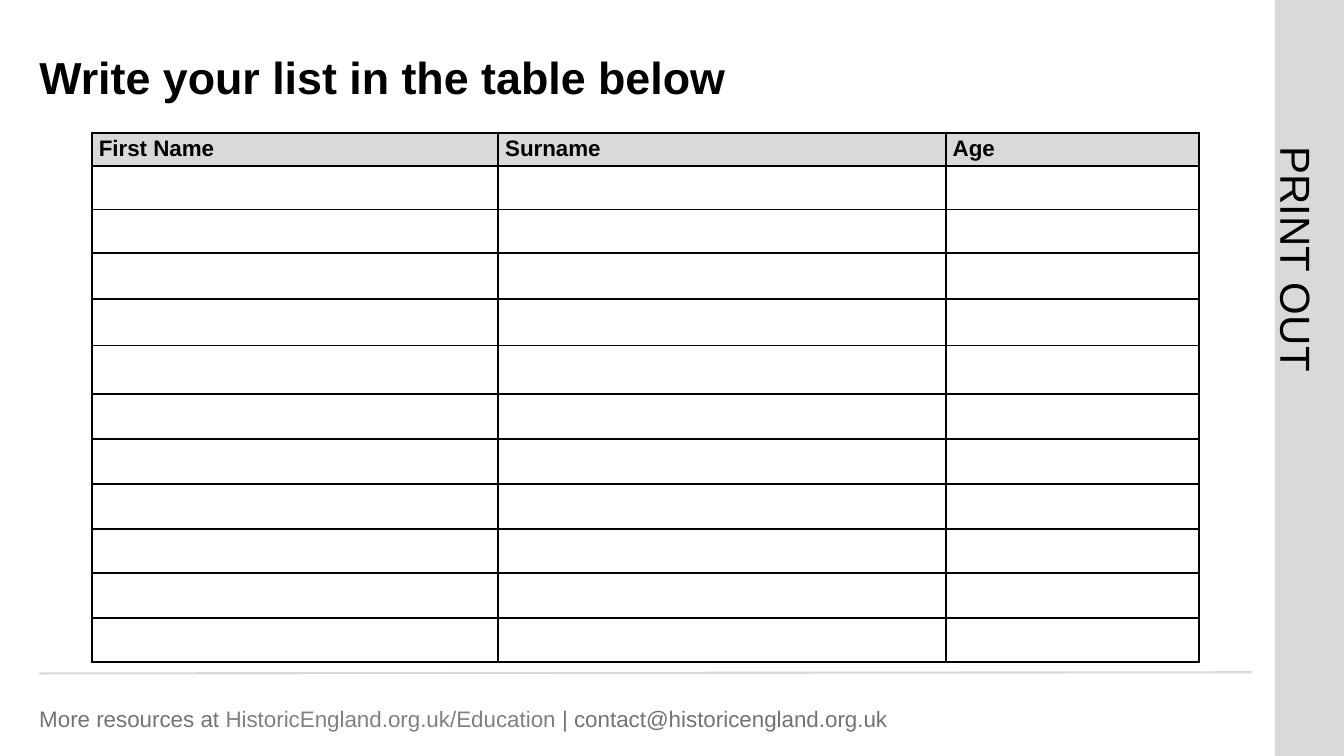
from dataclasses import dataclass
from lxml.etree import SubElement as Sub
from pptx import Presentation
from pptx.dml.color import RGBColor
from pptx.enum.shapes import MSO_CONNECTOR as Link, MSO_SHAPE as Form
from pptx.enum.text import MSO_ANCHOR as Anchor, PP_ALIGN as Align
from pptx.oxml.ns import qn
from pptx.util import Cm, Pt

INK, GREY, WHITE = "000000", "D9D9D9", "FFFFFF"


@dataclass
class Box:
    left: float
    top: float
    width: float
    height: float

    def cm(self) -> tuple:
        return Cm(self.left), Cm(self.top), Cm(self.width), Cm(self.height)


@dataclass
class Span:
    text: str
    color: str


@dataclass
class Label:
    box: Box
    spans: list[Span]
    size: int
    lead: float
    align: Align = Align.LEFT
    turn: int = 0


@dataclass
class Column:
    head: str
    width: float


LABELS = [
    Label(Box(0.99, 17.27, 24.46, 1.04),
          [Span("More resources at ", "737373"),
           Span("HistoricEngland.org.uk/Education ", "808080"),
           Span("| contact@historicengland.org.uk", "737373")], 16, 33.6),
    Label(Box(28.12, 5.61, 10.19, 1.83), [Span("PRINT OUT", INK)],
          30, 58.8, Align.CENTER, 90),
]
COLUMNS = [Column("First Name", 10.24), Column("Surname", 11.28), Column("Age", 6.38)]
ROWS = [0.79] + [1.09] * 2 + [1.17] * 2 + [1.22] + [1.14] * 2 + [1.12] * 4


def paint(target, color: str) -> None:
    target.solid()
    target.fore_color.rgb = RGBColor.from_string(color)


def style(para, size: int, bold: bool = False) -> None:
    para.font.name = "Arial"
    para.font.size = Pt(size)
    para.font.bold = bold


def inset(area, left: float, top: float, right: float) -> None:
    area.margin_left, area.margin_right = Cm(left), Cm(right)
    area.margin_top = area.margin_bottom = Cm(top)


def add_bar(slide) -> None:
    bar = slide.shapes.add_shape(Form.RECTANGLE, *Box(32.13, 0, 1.74, 19.05).cm())
    bar.shadow.inherit = False
    paint(bar.fill, GREY)
    bar.line.fill.background()


def add_rule(slide) -> None:
    rule = slide.shapes.add_connector(Link.STRAIGHT, Cm(0.99), Cm(16.97), Cm(31.55), Cm(16.94))
    paint(rule.line.fill, GREY)
    rule.line.width = Pt(1.5)
    Sub(rule._element.spPr, qn("a:effectLst"))


def add_label(slide, label: Label) -> None:
    shape = slide.shapes.add_textbox(*label.box.cm())
    shape.rotation = label.turn
    frame = shape.text_frame
    frame.word_wrap = True
    inset(frame, 0, 0, 0)
    para = frame.paragraphs[0]
    para.alignment = label.align
    para.line_spacing = Pt(label.lead)
    style(para, label.size)
    for span in label.spans:
        run = para.add_run()
        run.text = span.text
        paint(run.font.fill, span.color)


def set_title(slide, text: str) -> None:
    title = slide.shapes.title
    title.left, title.top, title.width, title.height = Box(0.99, 1.02, 30.56, 1.98).cm()
    frame = title.text_frame
    frame.text = text
    frame.word_wrap = True
    frame.vertical_anchor = Anchor.MIDDLE
    inset(frame, 0, 0.13, 0.25)
    para = frame.paragraphs[0]
    para.alignment = Align.LEFT
    para.line_spacing = 0.9
    style(para, 32, True)
    paint(para.font.fill, INK)


def add_edges(cell) -> None:
    props = cell._tc.get_or_add_tcPr()
    for side in ("lnL", "lnR", "lnT", "lnB"):
        edge = Sub(props, qn("a:" + side), w=str(Pt(1.5)))
        fill = Sub(edge, qn("a:solidFill"))
        Sub(fill, qn("a:srgbClr"), val=INK)


def add_grid(slide) -> None:
    box = Box(2.31, 3.35, sum(col.width for col in COLUMNS), sum(ROWS))
    grid = slide.shapes.add_table(len(ROWS), len(COLUMNS), *box.cm()).table
    grid.horz_banding = False
    for row, height in zip(grid.rows, ROWS):
        row.height = Cm(height)
    for x, col in enumerate(COLUMNS):
        grid.columns[x].width = Cm(col.width)
        for y in range(len(ROWS)):
            cell = grid.cell(y, x)
            inset(cell, 0.18, 0.08, 0.18)
            add_edges(cell)
            paint(cell.fill, WHITE if y else GREY)
            para = cell.text_frame.paragraphs[0]
            if y == 0:
                para.text = col.head
            style(para, 16, y == 0)
            paint(para.font.fill, INK)


def main() -> None:
    deck = Presentation()
    deck.slide_width, deck.slide_height = Cm(33.87), Cm(19.05)
    slide = deck.slides.add_slide(deck.slide_layouts[5])
    add_rule(slide)
    add_bar(slide)
    for label in LABELS:
        add_label(slide, label)
    set_title(slide, "Write your list in the table below")
    add_grid(slide)
    deck.save("out.pptx")


if __name__ == "__main__":
    main()
